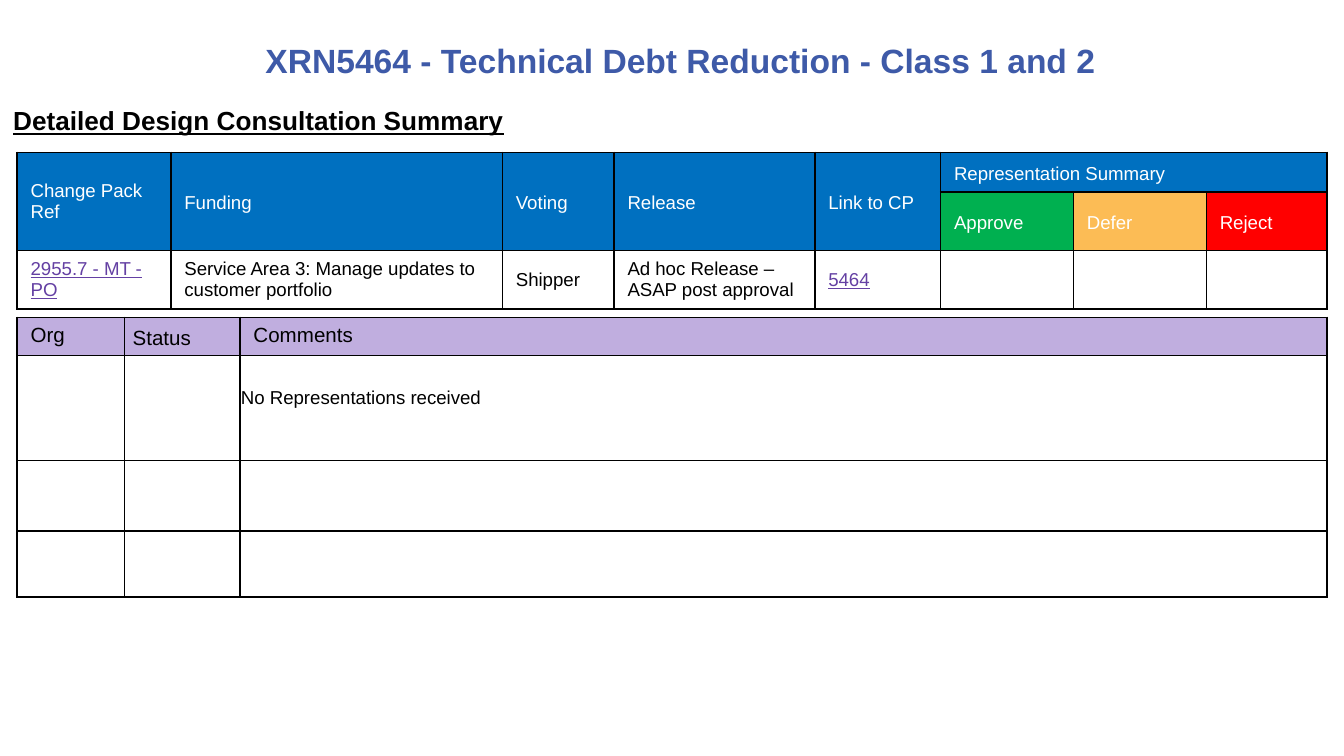
from lxml import etree
from pptx import Presentation
from pptx.dml.color import RGBColor
from pptx.enum.text import MSO_ANCHOR, PP_ALIGN
from pptx.oxml.ns import qn
from pptx.util import Pt

MIDDLE, TOP = MSO_ANCHOR.MIDDLE, MSO_ANCHOR.TOP
CENTER = PP_ALIGN.CENTER
TITLE_ONLY = 5

BLACK = RGBColor(0x00, 0x00, 0x00)
WHITE = RGBColor(0xFF, 0xFF, 0xFF)
TITLE_BLUE = RGBColor(0x3E, 0x5A, 0xA8)
HEADER_BLUE = RGBColor(0x00, 0x70, 0xC0)
GREEN = RGBColor(0x00, 0xB0, 0x50)
AMBER = RGBColor(0xFC, 0xBC, 0x55)
RED = RGBColor(0xFF, 0x00, 0x00)
LILAC = RGBColor(0xC0, 0xAE, 0xDF)
LINK_PURPLE = RGBColor(0x64, 0x40, 0xA3)


class SlideBuilder:
    font_name = "Arial"
    border_width = Pt(1)

    def __init__(self, slide):
        self.slide = slide

    def set_text(self, text_frame, text, size, color=BLACK, bold=False, underline=False):
        text_frame.text = text
        paragraph = text_frame.paragraphs[0]
        for run in paragraph.runs:
            font = run.font
            font.name, font.size = self.font_name, Pt(size)
            font.bold, font.underline = bold, underline
            font.color.rgb = color
        return paragraph

    def title(self, text, left, top, width, height):
        shape = self.slide.shapes.title
        shape.left, shape.top = Pt(left), Pt(top)
        shape.width, shape.height = Pt(width), Pt(height)
        shape.text_frame.vertical_anchor = MIDDLE
        paragraph = self.set_text(shape.text_frame, text, 18, TITLE_BLUE, bold=True)
        paragraph.alignment = CENTER

    def heading(self, text, left, top, width, height):
        shape = self.slide.shapes.add_textbox(Pt(left), Pt(top), Pt(width), Pt(height))
        shape.text_frame.word_wrap = True
        self.set_text(shape.text_frame, text, 14, bold=True, underline=True)

    def table(self, left, top, widths, heights):
        """Add an empty table with black borders and small, unfilled cells."""
        frame = self.slide.shapes.add_table(
            len(heights), len(widths), Pt(left), Pt(top), Pt(sum(widths)), Pt(sum(heights)))
        table = frame.table
        table.first_row = table.horz_banding = False
        for column, width in zip(table.columns, widths):
            column.width = Pt(width)
        for row, height in zip(table.rows, heights):
            row.height = Pt(height)
        for cell in table.iter_cells():
            self.border(cell)
            cell.fill.background()
            paragraph = cell.text_frame.paragraphs[0]
            etree.SubElement(paragraph._p, qn("a:endParaRPr"), sz="1000")
        return table

    def border(self, cell):
        properties = cell._tc.get_or_add_tcPr()
        for side in ("a:lnL", "a:lnR", "a:lnT", "a:lnB"):
            line = etree.SubElement(properties, qn(side), w=str(self.border_width))
            fill = etree.SubElement(line, qn("a:solidFill"))
            etree.SubElement(fill, qn("a:srgbClr"), val=str(BLACK))

    def cell(self, cell, text, size=10, color=BLACK, fill=None, underline=False,
             anchor=MIDDLE, spacing=None):
        cell.vertical_anchor = anchor
        if fill is not None:
            cell.fill.solid()
            cell.fill.fore_color.rgb = fill
        paragraph = self.set_text(cell.text_frame, text, size, color, underline=underline)
        if spacing:
            paragraph.line_spacing = spacing

    def margins(self, cell, left, top, right, bottom):
        cell.margin_left, cell.margin_top = Pt(left), Pt(top)
        cell.margin_right, cell.margin_bottom = Pt(right), Pt(bottom)


def add_change_pack_table(builder):
    table = builder.table(9.2, 81.6, [82.4, 177.6, 59.8, 107.6, 67.4, 71.2, 71.2, 64.6],
                          [21.4, 31, 31])
    headers = ["Change Pack Ref", "Funding", "Voting", "Release", "Link to CP"]
    for column, text in enumerate(headers):
        table.cell(0, column).merge(table.cell(1, column))
        builder.cell(table.cell(0, column), text, color=WHITE, fill=HEADER_BLUE,
                     spacing=1.15 if column else None)

    first_vote = len(headers)
    table.cell(0, first_vote).merge(table.cell(0, first_vote + 2))
    builder.cell(table.cell(0, first_vote), "Representation Summary", color=WHITE,
                 fill=HEADER_BLUE, spacing=1.15)
    votes = [("Approve", GREEN), ("Defer", AMBER), ("Reject", RED)]
    for column, (text, fill) in enumerate(votes, first_vote):
        builder.cell(table.cell(1, column), text, color=WHITE, fill=fill, spacing=1.15)

    details = ["2955.7 - MT - PO", "Service Area 3: Manage updates to customer portfolio",
               "Shipper", "Ad hoc Release – ASAP post approval", "5464"]
    link_columns = (0, 4)
    for column, text in enumerate(details):
        is_link = column in link_columns
        builder.cell(table.cell(2, column), text, color=LINK_PURPLE if is_link else BLACK,
                     underline=is_link)


def add_comments_table(builder):
    table = builder.table(9.2, 170, [57.4, 62, 582.4], [20.4, 56.4, 37.8, 35.4])
    for column, text in enumerate(["Org", "Status", "Comments"]):
        builder.cell(table.cell(0, column), text, size=11, fill=LILAC, anchor=TOP)
    status = table.cell(0, 1)
    builder.margins(status, 4.5, 0, 4.5, 0)
    status.vertical_anchor = MIDDLE
    status.text_frame.paragraphs[0].line_spacing = 1.15

    comment = table.cell(1, 2)
    builder.cell(comment, "No Representations received")
    builder.margins(comment, 0.5, 0.5, 0.5, 11)


def main():
    presentation = Presentation()
    presentation.slide_width, presentation.slide_height = Pt(720), Pt(405)
    slide = presentation.slides.add_slide(presentation.slide_layouts[TITLE_ONLY])
    builder = SlideBuilder(slide)
    builder.title("XRN5464 - Technical Debt Reduction - Class 1 and 2", 9.2, 0, 710.8, 64)
    builder.heading("Detailed Design Consultation Summary", 0, 52.6, 343.4, 24.2)
    add_change_pack_table(builder)
    add_comments_table(builder)
    presentation.save("out.pptx")


if __name__ == "__main__":
    main()
